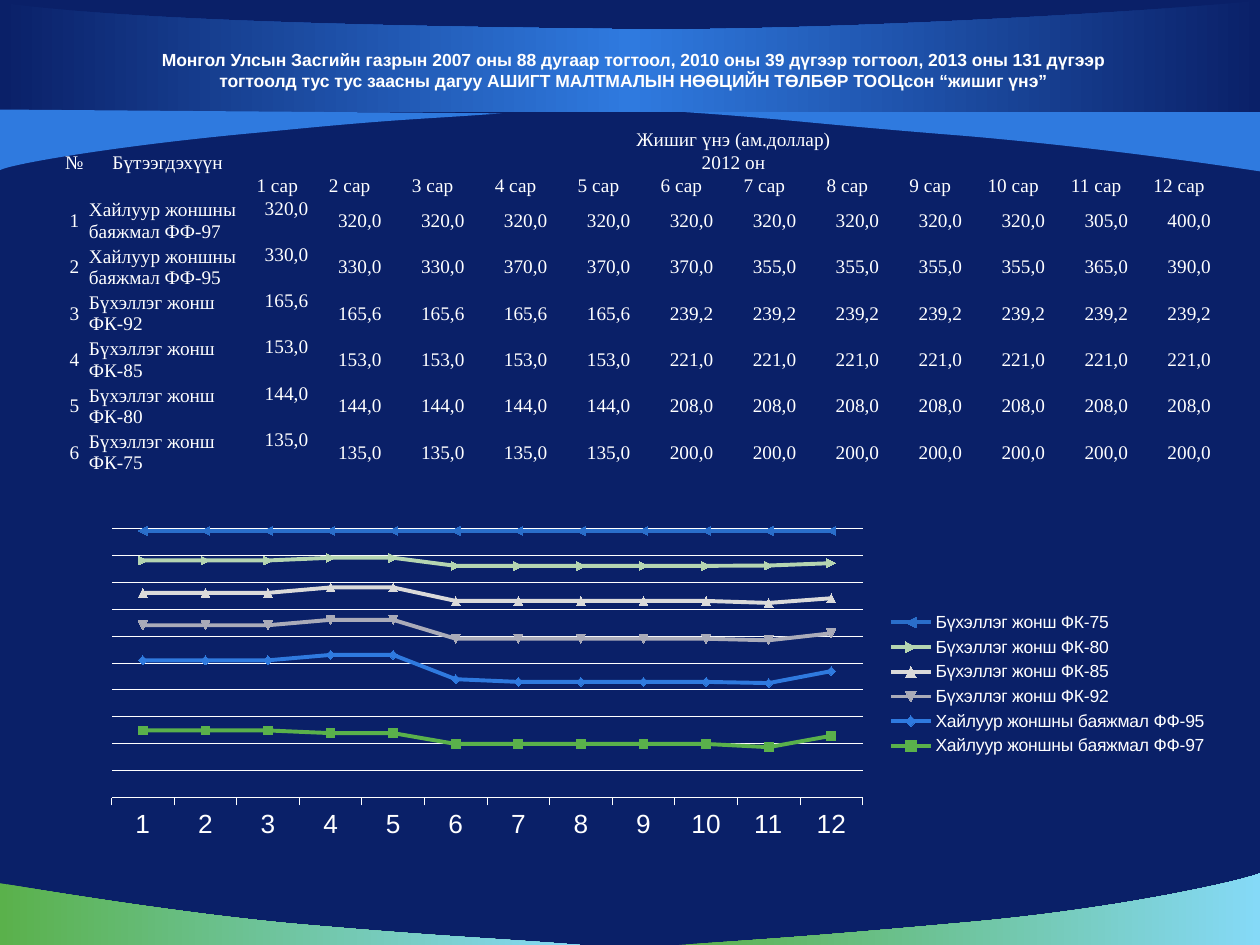
from copy import deepcopy
from dataclasses import dataclass
from typing import Any

from lxml.etree import SubElement
from pptx import Presentation
from pptx.chart.data import CategoryChartData
from pptx.dml.color import RGBColor
from pptx.enum.chart import XL_CHART_TYPE as ChartType, XL_LEGEND_POSITION as LegendSide, XL_TICK_MARK as Tick
from pptx.enum.text import MSO_ANCHOR as Anchor, PP_ALIGN as Align
from pptx.oxml.ns import qn
from pptx.util import Pt

WHITE, NAVY, BLUE, GREEN, SKY = "FFFFFF", "0A2068", "2F7ADF", "5AB14B", "85D9F7"
NO_GRID_STYLE = "{2D5ABB26-0587-4C30-8999-92F81FD0307C}"
CHART_WIDTH, PLOT_WIDTH = 646.6, 429.2
MONTHS = range(1, 13)


@dataclass
class Wave:
    colors: list[str]
    start: tuple[float, float]
    segments: list[list[tuple[float, float]]]


@dataclass
class Product:
    name: str
    prices: list[tuple[str, int]]
    shares: list[int]
    color: str


WAVES = [
    Wave([GREEN, SKY], (331.2, 540), [
        [(276.5, 535.7), (257.8, 535.7), (167, 527.8)],
        [(90.7, 520.6), (0.7, 504.7), (0, 504.7)],
        [(0, 540)]]),
    Wave([GREEN, SKY], (388.1, 540), [
        [(442.1, 536.4), (465.1, 535), (553.7, 527)],
        [(642.2, 519.1), (712.8, 502.6), (720, 499)],
        [(720, 540)]]),
    Wave([BLUE], (391.7, 64.1), [
        [(446.4, 67.7), (462.2, 70.6), (553, 77.8)],
        [(643.7, 85.7), (719.3, 97.9), (720, 97.9)],
        [(720, 63.4)]]),
    Wave([NAVY, BLUE, NAVY], (0, 64.1), [
        [(720, 64.1)],
        [(720, 0)],
        [(694.1, 4.3), (470.2, 18.7), (350.6, 16.6)],
        [(231.1, 15.1), (72.7, 12.2), (0, 1.4)]]),
    Wave([BLUE], (286.6, 64.8), [
        [(238.3, 68.4), (229, 67.7), (149.8, 75.6)],
        [(69.8, 82.8), (6.5, 93.6), (0, 97.2)],
        [(0, 62.6)]]),
]

PRODUCTS = [
    Product("Хайлуур жоншны баяжмал\u00a0ФФ-97", [("320,0", 10), ("305,0", 1), ("400,0", 1)],
            [26, 26, 26, 25, 25, 21, 21, 21, 21, 21, 20, 24], GREEN),
    Product("Хайлуур жоншны баяжмал\u00a0ФФ-95",
            [("330,0", 3), ("370,0", 3), ("355,0", 4), ("365,0", 1), ("390,0", 1)],
            [26, 26, 26, 29, 29, 24, 23, 23, 23, 23, 24, 24], BLUE),
    Product("Бүхэллэг жонш ФК-92", [("165,6", 5), ("239,2", 7)],
            [13, 13, 13, 13, 13, 15, 16, 16, 16, 16, 16, 14], "AAABB9"),
    Product("Бүхэллэг жонш ФК-85", [("153,0", 5), ("221,0", 7)],
            [12, 12, 12, 12, 12, 14, 14, 14, 14, 14, 14, 13], "DADADA"),
    Product("Бүхэллэг жонш ФК-80", [("144,0", 5), ("208,0", 7)],
            [12, 12, 12, 11, 11, 13, 13, 13, 13, 13, 14, 13], "B5D5B1"),
    Product("Бүхэллэг жонш ФК-75", [("135,0", 5), ("200,0", 7)],
            [11, 11, 11, 10, 10, 13, 13, 13, 13, 13, 13, 12], "2A6ECA"),
]


def rgb(value: str) -> RGBColor:
    return RGBColor.from_string(value)


def apply(target: Any, formats: dict[str, Any]) -> None:
    for attribute, value in formats.items():
        setattr(target, attribute, value)


def style_font(font: Any, size: float, name: str = "Arial", bold: bool = False) -> None:
    apply(font, {"size": Pt(size), "name": name, "bold": bold})
    font.color.rgb = rgb(WHITE)


def style_line(line: Any, color: str, width: float) -> None:
    line.color.rgb = rgb(color)
    line.width = Pt(width)


def bend_segments(band: Any, wave: Wave) -> None:
    edges = iter(list(band._element.iter(qn("a:lnTo"))))
    for segment in wave.segments:
        edge, *rest = [next(edges) for _ in segment]
        if rest:
            edge.tag = qn("a:cubicBezTo")
            for extra in rest:
                edge.append(extra[0])
                extra.getparent().remove(extra)


def draw_wave(slide: Any, wave: Wave) -> None:
    outline = [wave.start, *(point for segment in wave.segments for point in segment)]
    corners = [(Pt(x), Pt(y)) for x, y in outline]
    builder = slide.shapes.build_freeform(*corners[0], scale=1.0)
    builder.add_line_segments(corners[1:], close=True)
    band = builder.convert_to_shape()
    bend_segments(band, wave)
    band.shadow.inherit = False
    band.line.fill.background()
    if len(wave.colors) == 1:
        band.fill.solid()
        band.fill.fore_color.rgb = rgb(wave.colors[0])
        return
    band.fill.gradient()
    band.fill.gradient_angle = 0
    stop_list = next(band._element.iter(qn("a:gsLst")))
    for _ in wave.colors[2:]:
        stop_list.append(deepcopy(stop_list[0]))
    for index, (stop, color) in enumerate(zip(band.fill.gradient_stops, wave.colors)):
        stop.color.rgb = rgb(color)
        stop.position = index / (len(wave.colors) - 1)


def draw_title(slide: Any) -> None:
    title = slide.shapes.add_textbox(Pt(34.8), Pt(17.5), Pt(653.8), Pt(44.6)).text_frame
    apply(title, {"word_wrap": True, "vertical_anchor": Anchor.MIDDLE})
    heading = title.paragraphs[0]
    heading.text = ("Монгол Улсын Засгийн газрын 2007 оны 88 дугаар тогтоол, 2010 оны 39 дүгээр тогтоол, "
                    "2013 оны 131 дүгээр\vтогтоолд тус тус заасны дагуу "
                    "АШИГТ МАЛТМАЛЫН НӨӨЦИЙН ТӨЛБӨР ТООЦсон “жишиг үнэ”")
    heading.alignment = Align.CENTER
    for run in heading.runs:
        style_font(run.font, 10, bold=True)


def write_cell(cell: Any, text: str, align: Any = Align.CENTER, anchor: Any = Anchor.MIDDLE,
               right: float = 0) -> None:
    apply(cell, {"margin_right": Pt(right), "vertical_anchor": anchor})
    paragraph = cell.text_frame.paragraphs[0]
    paragraph.alignment = align
    run = paragraph.add_run()
    run.text = text
    style_font(run.font, 11, "Times New Roman")


def draw_prices(slide: Any) -> None:
    widths = [16.6, 90, 35.3] + [47.4] * 11
    heights = [12.25] * 3 + [24.5] * len(PRODUCTS)
    frame = slide.shapes.add_table(len(heights), len(widths), Pt(34.2), Pt(73.4),
                                   Pt(sum(widths)), Pt(sum(heights)))
    prices = frame.table
    apply(prices, {"first_row": False, "horz_banding": False})
    next(frame._element.iter(qn("a:tableStyleId"))).text = NO_GRID_STYLE
    for column, width in zip(prices.columns, widths):
        column.width = Pt(width)
    for row, height in zip(prices.rows, heights):
        row.height = Pt(height)
    for cell in prices.iter_cells():
        cell.fill.background()
        apply(cell, {"margin_left": 0, "margin_top": 0, "margin_right": 0, "margin_bottom": 0})
    for top, left, bottom, right, text in [
        (0, 0, 2, 0, "№"), (0, 1, 2, 1, "Бүтээгдэхүүн"),
        (0, 2, 0, 13, "Жишиг үнэ (ам.доллар)"), (1, 2, 1, 13, "2012 он"),
    ]:
        prices.cell(top, left).merge(prices.cell(bottom, right))
        write_cell(prices.cell(top, left), text)
    for month in MONTHS:
        write_cell(prices.cell(2, month + 1), f"{month} сар")
    for number, product in enumerate(PRODUCTS, 1):
        row = number + 2
        write_cell(prices.cell(row, 0), str(number))
        write_cell(prices.cell(row, 1), product.name, Align.LEFT)
        monthly = [price for price, count in product.prices for _ in range(count)]
        for month, price in zip(MONTHS, monthly):
            first = month == 1
            write_cell(prices.cell(row, month + 1), price, Align.RIGHT,
                       Anchor.TOP if first else Anchor.MIDDLE, 0 if first else 5.5)


def draw_shares(slide: Any) -> None:
    data = CategoryChartData()
    data.categories = [str(month) for month in MONTHS]
    for product in PRODUCTS:
        data.add_series(product.name, product.shares)
    chart = slide.shapes.add_chart(ChartType.LINE_MARKERS_STACKED_100, Pt(50.8), Pt(298.1),
                                   Pt(CHART_WIDTH), Pt(185.8), data).chart
    apply(chart, {"has_title": False, "has_legend": True})
    style_font(chart.font, 18)
    apply(chart.legend, {"position": LegendSide.RIGHT, "include_in_layout": False})
    style_font(chart.legend.font, 10)
    months, scale = chart.category_axis, chart.value_axis
    apply(months, {"major_tick_mark": Tick.OUTSIDE, "has_major_gridlines": False})
    style_font(months.tick_labels.font, 15)
    apply(scale, {"visible": False, "minimum_scale": 0.01, "major_unit": 0.1, "has_major_gridlines": True})
    for line in (months.format.line, scale.major_gridlines.format.line):
        style_line(line, WHITE, 0.5)
    plot = chart.plots[0]
    plot.vary_by_categories = False
    for series, product in zip(plot.series, PRODUCTS):
        series.smooth = False
        style_line(series.format.line, product.color, 2.25)
        series.marker.format.fill.solid()
        series.marker.format.fill.fore_color.rgb = rgb(product.color)
        style_line(series.marker.format.line, product.color, 0.75)
    area = next(chart._chartSpace.iter(qn("c:plotArea")))
    for old in area.findall(qn("c:layout")):
        area.remove(old)
    layout = SubElement(area, qn("c:layout"))
    area.insert(0, layout)
    manual = SubElement(layout, qn("c:manualLayout"))
    for tag, value in {"layoutTarget": "inner", "xMode": "edge", "yMode": "edge", "x": 0.02,
                       "y": 0.02, "w": PLOT_WIDTH / CHART_WIDTH, "h": 0.83}.items():
        SubElement(manual, qn(f"c:{tag}")).set("val", str(value))


def main() -> None:
    deck = Presentation()
    apply(deck, {"slide_width": Pt(720), "slide_height": Pt(540)})
    slide = deck.slides.add_slide(deck.slide_layouts[6])
    slide.background.fill.solid()
    slide.background.fill.fore_color.rgb = rgb(NAVY)
    for wave in WAVES:
        draw_wave(slide, wave)
    draw_title(slide)
    draw_prices(slide)
    draw_shares(slide)
    deck.save("out.pptx")


if __name__ == "__main__":
    main()
